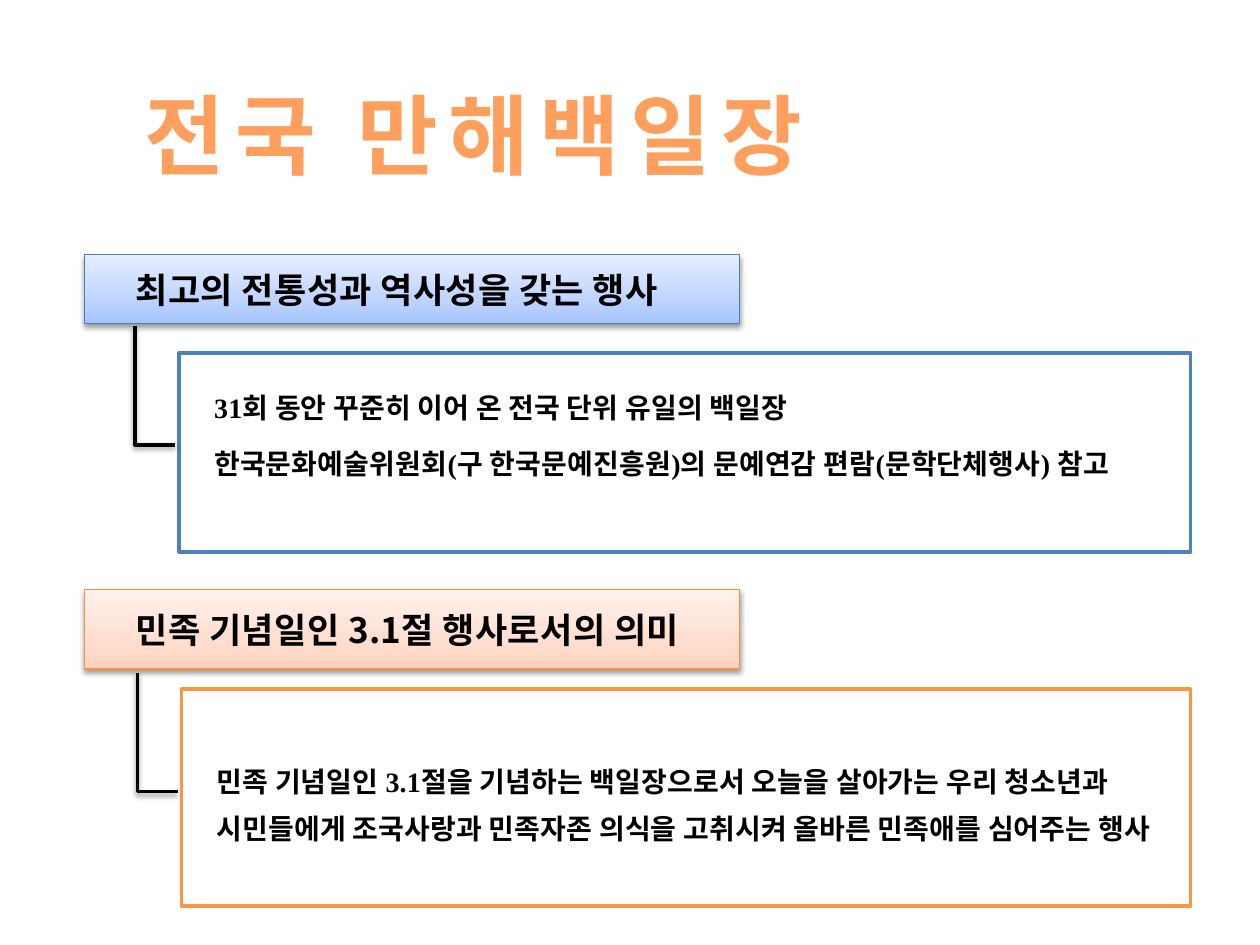
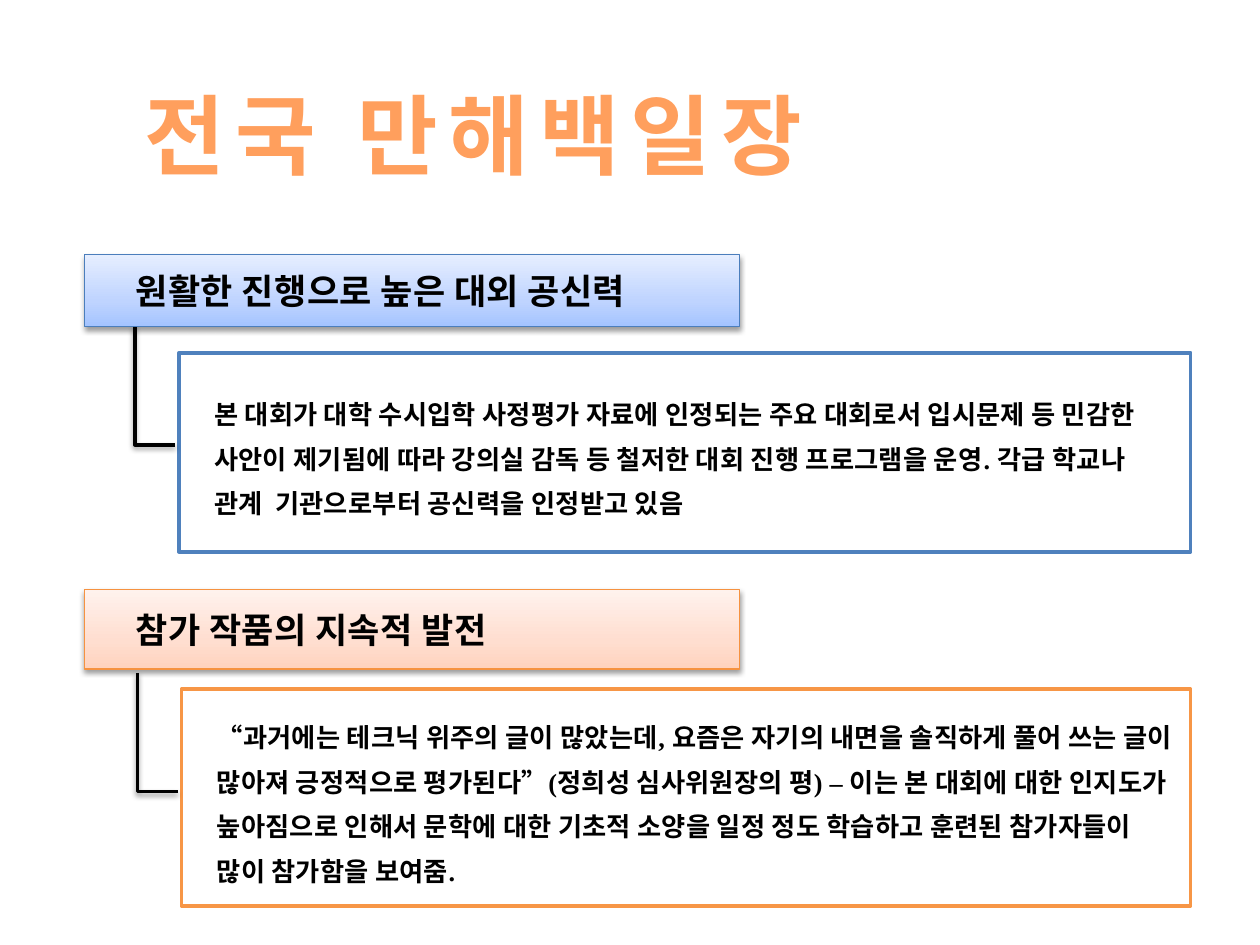
from lxml import etree
from pptx import Presentation
from pptx.dml.color import RGBColor
from pptx.enum.shapes import MSO_CONNECTOR, MSO_SHAPE
from pptx.enum.text import MSO_ANCHOR, MSO_AUTO_SIZE, PP_ALIGN
from pptx.oxml.ns import qn
from pptx.util import Inches, Pt

RECT, ELBOW = MSO_SHAPE.RECTANGLE, MSO_CONNECTOR.ELBOW
TOP, MIDDLE = MSO_ANCHOR.TOP, MSO_ANCHOR.MIDDLE
LEFT, NO_FIT = PP_ALIGN.LEFT, MSO_AUTO_SIZE.NONE
SANS, SERIF = "Noto Sans CJK KR", "Times New Roman"
BLACK, WHITE = "000000", "FFFFFF"
TITLE = "전국 만해백일장"
TITLE_STOPS = [(0, "FFA367"), (25, "FF9F5D"), (50, "F38E3A"), (75, "FF9F5D"), (100, "FFA367")]
BLUE = {"stops": [(0, "A4C4FF"), (35, "BFD4FF"), (100, "E6EEFF")],
        "banner_line": "4B7EBC", "box_line": "4F81BD"}
ORANGE = {"stops": [(0, "FFD2BD"), (35, "FFDED0"), (100, "FFF2ED")],
          "banner_line": "F69240", "box_line": "F79646"}
UPPER = {"theme": BLUE, "banner_top": 2.02, "box": (1.42, 2.8, 8.03, 1.58), "elbow": (1.07, 2.59)}
LOWER = {"theme": ORANGE, "banner_top": 4.68, "box": (1.44, 5.47, 8.01, 1.72), "elbow": (1.09, 5.34)}
SLIDES = [
    [
        {"place": UPPER, "height": 0.55, "heading": "최고의 전통성과 역사성을 갖는 행사",
         "size": 16, "spacing": 1.66, "bottom": 0.5,
         "body": ["31회 동안 꾸준히 이어 온 전국 단위 유일의 백일장",
                  "한국문화예술위원회(구 한국문예진흥원)의 문예연감 편람(문학단체행사) 참고"]},
        {"place": LOWER, "height": 0.63, "heading": "민족 기념일인 3.1절 행사로서의 의미",
         "size": 16, "spacing": 1.41, "bottom": 0.05,
         "body": ["민족 기념일인 3.1절을 기념하는 백일장으로서 오늘을 살아가는 우리 청소년과 "
                  "시민들에게 조국사랑과 민족자존 의식을 고취시켜 올바른 민족애를 심어주는 행사"]},
    ],
    [
        {"place": UPPER, "height": 0.57, "heading": "원활한 진행으로 높은 대외 공신력",
         "size": 15, "spacing": 1.41, "bottom": 0.05,
         "body": ["본 대회가 대학 수시입학 사정평가 자료에 인정되는 주요 대회로서 입시문제 등 민감한 "
                  "사안이 제기됨에 따라 강의실 감독 등 철저한 대회 진행 프로그램을 운영. 각급 학교나 "
                  "관계  기관으로부터 공신력을 인정받고 있음"]},
        {"place": LOWER, "height": 0.63, "heading": "참가 작품의 지속적 발전",
         "size": 15, "spacing": 1.41, "bottom": 0.05,
         "body": ["“과거에는 테크닉 위주의 글이 많았는데, 요즘은 자기의 내면을 솔직하게 풀어 쓰는 "
                  "글이 많아져 긍정적으로 평가된다”(정희성 심사위원장의 평) – 이는 본 대회에 대한 "
                  "인지도가  높아짐으로 인해서 문학에 대한 기초적 소양을 일정 정도 학습하고 훈련된 "
                  "참가자들이 많이 참가함을 보여줌."]},
    ],
]


def rgb(value):
    """Return the colour for a hex string."""
    return RGBColor.from_string(value)


def apply(target, formats):
    """Set each named attribute of the target."""
    for name, value in formats.items():
        setattr(target, name, value)


def child(parent, tag, **attrs):
    """Append a child element with the given attributes."""
    element = etree.SubElement(parent, qn(tag))
    for name, value in attrs.items():
        element.set(name, str(value))
    return element


def set_gradient(parent, stops, angle):
    """Replace the solid fill of an element by a linear gradient."""
    grad = etree.Element(qn("a:gradFill"), rotWithShape="1")
    gs_list = child(grad, "a:gsLst")
    for position, value in stops:
        child(child(gs_list, "a:gs", pos=position * 1000), "a:srgbClr", val=value)
    child(grad, "a:lin", ang=angle * 60000, scaled=0)
    parent.replace(parent.find(qn("a:solidFill")), grad)


def add_shadow(effects):
    """Put the soft downward shadow into an effect list."""
    shadow = child(effects, "a:outerShdw", blurRad=Pt(3.1), dist=Pt(1.6), dir=5400000, rotWithShape=0)
    child(child(shadow, "a:srgbClr", val=BLACK), "a:alpha", val=38000)


def set_line(sp, value, width):
    """Give a shape or connector a plain line."""
    sp.line.color.rgb = rgb(value)
    sp.line.width = Pt(width)


def add_run(p, text, font, size, tracking):
    """Add a bold black run with Korean letters in the sans font."""
    r = p.add_run()
    r.text = text
    apply(r.font, {"name": font, "size": Pt(size), "bold": True})
    r.font.color.rgb = rgb(BLACK)
    r_pr = r.font._element
    r_pr.set("spc", str(tracking))
    child(r_pr, "a:ea", typeface=SANS)
    return r_pr


def add_box(s, box, line, width):
    """Add a white outlined rectangle with text centred vertically."""
    sp = s.shapes.add_shape(RECT, *map(Inches, box))
    sp.shadow.inherit = False
    sp.fill.solid()
    sp.fill.fore_color.rgb = rgb(WHITE)
    set_line(sp, line, width)
    apply(sp.text_frame, {"word_wrap": True, "vertical_anchor": MIDDLE})
    return sp


def add_title(s):
    """Format the title placeholder with wide gradient letters."""
    sp = s.shapes.title
    apply(sp, dict(zip(("left", "top", "width", "height"), map(Inches, (1.05, 0.59, 6.02, 0.94)))))
    apply(sp.text_frame, {"word_wrap": True, "auto_size": NO_FIT, "vertical_anchor": TOP})
    p = sp.text_frame.paragraphs[0]
    p.alignment = LEFT
    set_gradient(add_run(p, TITLE, SANS, 50, 600), TITLE_STOPS, 90)


def add_banner(s, box, text, theme):
    """Add a shaded heading bar."""
    sp = add_box(s, box, theme["banner_line"], 0.75)
    sp_pr = sp.element.spPr
    set_gradient(sp_pr, theme["stops"], 270)
    add_shadow(sp_pr.find(qn("a:effectLst")))
    p = sp.text_frame.paragraphs[0]
    p.alignment = LEFT
    p._p.get_or_add_pPr().set("marL", str(Inches(0.31)))
    add_run(p, text, SANS, 20, 20)


def add_body(s, box, panel):
    """Add the outlined box with its paragraphs."""
    sp = add_box(s, box, panel["place"]["theme"]["box_line"], 2)
    tf = sp.text_frame
    apply(tf, {"margin_left": Inches(0.28), "margin_bottom": Inches(panel["bottom"])})
    for i, text in enumerate(panel["body"]):
        p = tf.add_paragraph() if i else tf.paragraphs[0]
        apply(p, {"alignment": LEFT, "line_spacing": panel["spacing"]})
        add_run(p, text, SERIF, panel["size"], 15)


def add_elbow(s, left, top, width=0.32, height=0.94):
    """Add a connector that runs down and then right."""
    x, y = left + (width - height) / 2, top + (height - width) / 2
    sp = s.shapes.add_connector(ELBOW, *map(Inches, (x + height, y, x, y + width)))
    set_line(sp, BLACK, 2)
    sp_pr = sp.element.spPr
    sp_pr.find(qn("a:xfrm")).set("rot", str(270 * 60000))
    sp_pr.find(qn("a:prstGeom")).set("prst", "bentConnector2")
    add_shadow(child(sp_pr, "a:effectLst"))


def add_panel(s, panel):
    """Add a heading bar, its body box and the elbow between them."""
    place = panel["place"]
    add_body(s, place["box"], panel)
    add_elbow(s, *place["elbow"])
    add_banner(s, (0.67, place["banner_top"], 5.2, panel["height"]), panel["heading"], place["theme"])


def main():
    """Build and save the slides."""
    prs = Presentation()
    apply(prs, {"slide_width": Inches(10), "slide_height": Inches(7.5)})
    for panels in SLIDES:
        s = prs.slides.add_slide(prs.slide_layouts[5])
        add_title(s)
        for panel in panels:
            add_panel(s, panel)
    prs.save("out.pptx")


if __name__ == "__main__":
    main()
